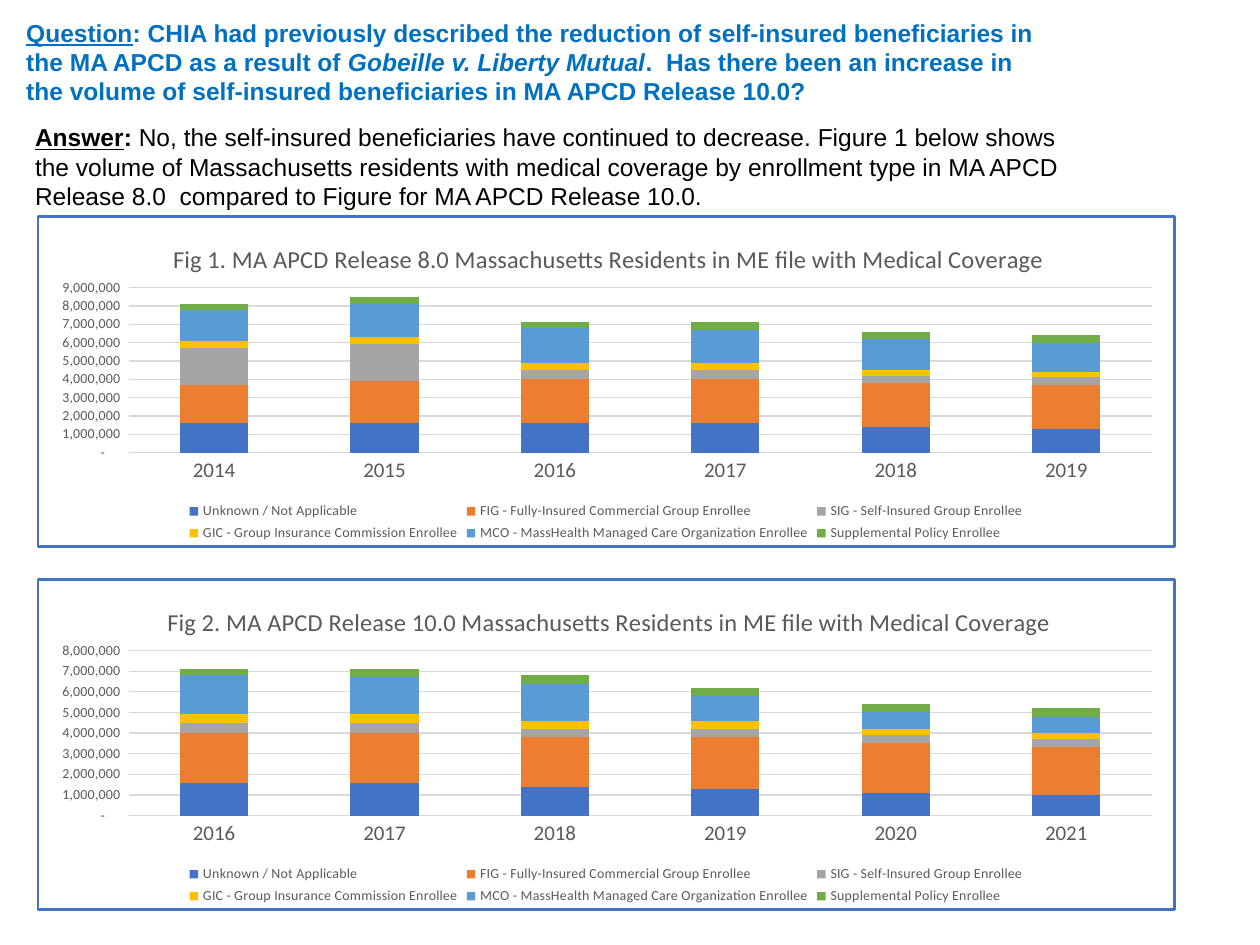
from lxml.etree import SubElement
from pptx import Presentation
from pptx.chart.data import CategoryChartData
from pptx.dml.color import RGBColor
from pptx.enum.chart import XL_CHART_TYPE, XL_LEGEND_POSITION, XL_TICK_MARK
from pptx.oxml import parse_xml
from pptx.oxml.ns import nsdecls, qn
from pptx.util import Inches, Pt

# Content: each paragraph is a list of (text, styles), b = bold, i = italic, u = underlined
QUESTION = [
    [("Question", "bu"),
     (": CHIA had previously described the reduction of self-insured beneficiaries in "
      "the MA APCD as a result of ", "b"),
     ("Gobeille v. Liberty Mutual", "bi"),
     (".  Has there been an increase in", "b")],
    [("the volume of self-insured beneficiaries in MA APCD Release 10.0?", "b")],
]
ANSWER = [
    [("Answer", "bu"), (": ", "b"),
     ("No, the self-insured beneficiaries have continued to decrease. Figure 1 below shows "
      "the volume of Massachusetts residents with medical coverage by enrollment type in "
      "MA APCD Release 8.0  compared to Figure for MA APCD Release 10.0.", "")],
]
ENROLLMENT_TYPES = [
    ("Unknown / Not Applicable", "4472C4"),
    ("FIG - Fully-Insured Commercial Group Enrollee", "ED7D31"),
    ("SIG - Self-Insured Group Enrollee", "A5A5A5"),
    ("GIC - Group Insurance Commission Enrollee", "FFC000"),
    ("MCO - MassHealth Managed Care Organization Enrollee", "5B9BD5"),
    ("Supplemental Policy Enrollee", "70AD47"),
]
# Volumes in millions, one row per enrollment type; title_left is a share of the chart width
FIGURES = [
    {"title": "Fig 1. MA APCD Release 8.0 Massachusetts Residents in ME file with Medical Coverage",
     "title_left": 0.115, "first_year": 2014, "axis_top": 9,
     "volumes": [
         [1.6, 1.6, 1.6, 1.6, 1.4, 1.3],
         [2.1, 2.3, 2.4, 2.4, 2.4, 2.4],
         [2.0, 2.0, 0.5, 0.5, 0.4, 0.4],
         [0.4, 0.4, 0.4, 0.4, 0.3, 0.3],
         [1.7, 1.8, 1.9, 1.8, 1.7, 1.6],
         [0.3, 0.4, 0.3, 0.4, 0.4, 0.4]]},
    {"title": "Fig 2. MA APCD Release 10.0 Massachusetts Residents in ME file with Medical Coverage",
     "title_left": 0.11, "first_year": 2016, "axis_top": 8,
     "volumes": [
         [1.6, 1.6, 1.4, 1.3, 1.1, 1.0],
         [2.4, 2.4, 2.4, 2.5, 2.4, 2.3],
         [0.5, 0.5, 0.4, 0.4, 0.4, 0.4],
         [0.4, 0.4, 0.4, 0.4, 0.3, 0.3],
         [1.9, 1.8, 1.8, 1.2, 0.8, 0.8],
         [0.3, 0.4, 0.4, 0.4, 0.4, 0.4]]},
]
MILLION = 1_000_000
GRAY, GRID, BLUE = "595959", "D9D9D9", "4472C4"
NUMBER_FORMAT = '_(* #,##0_);_(* \\(#,##0\\);_(* "-"??_);_('
CHART_LEFT, CHART_TOP, CHART_WIDTH, CHART_HEIGHT, CHART_PITCH = 0.29, 1.71, 9.04, 2.64, 2.88


def rgb(color):
    return RGBColor.from_string(color)


def style_font(font, size, color, name="Calibri"):
    font.size, font.name, font.color.rgb = Pt(size), name, rgb(color)


def style_line(line, color, width=0.75):
    line.color.rgb, line.width = rgb(color), Pt(width)


def add_text(slide, paragraphs, color, left, top, width, height):
    frame = slide.shapes.add_textbox(*map(Inches, (left, top, width, height))).text_frame
    frame.word_wrap = True
    for index, runs in enumerate(paragraphs):
        paragraph = frame.paragraphs[0] if index == 0 else frame.add_paragraph()
        style_font(paragraph.font, 14, color, "Arial")
        for text, styles in runs:
            run = paragraph.add_run()
            run.text = text
            run.font.bold = "b" in styles
            run.font.italic = "i" in styles
            run.font.underline = "u" in styles


def set_layout(parent, before, **shares):
    """Place a chart part by shares of the chart's size."""
    for old in parent.findall(qn("c:layout")):
        parent.remove(old)
    layout = parse_xml(f"<c:layout {nsdecls('c')}><c:manualLayout/></c:layout>")
    for key, value in shares.items():
        SubElement(layout[0], qn(f"c:{key}")).set("val", str(value))
    if before is None:
        parent.insert(0, layout)
    else:
        before.addnext(layout)


def add_figure(slide, figure, top):
    data = CategoryChartData(number_format="#,##0")
    data.categories = [str(figure["first_year"] + n) for n in range(len(figure["volumes"][0]))]
    for (name, _), volumes in zip(ENROLLMENT_TYPES, figure["volumes"]):
        data.add_series(name, [round(volume * MILLION) for volume in volumes])
    chart = slide.shapes.add_chart(
        XL_CHART_TYPE.COLUMN_STACKED,
        *map(Inches, (CHART_LEFT, top, CHART_WIDTH, CHART_HEIGHT)), data).chart
    style_font(chart.font, 10, "000000")

    # Stacked columns
    plot = chart.plots[0]
    plot.gap_width, plot.overlap, plot.vary_by_categories = 150, 100, False
    for series, (_, color) in zip(plot.series, ENROLLMENT_TYPES):
        series.format.fill.solid()
        series.format.fill.fore_color.rgb = rgb(color)
    plot_area = chart._chartSpace.chart.plotArea
    set_layout(plot_area, None, layoutTarget="inner", xMode="edge", yMode="edge",
               x=0.08, y=0.215, w=0.9, h=0.5)

    # Title
    chart.has_title = True
    title = chart.chart_title
    title.text_frame.text = figure["title"]
    title_font = title.text_frame.paragraphs[0].font
    style_font(title_font, 14, GRAY)
    title_font.bold = False
    title.include_in_layout = False
    set_layout(title._element, title._element.find(qn("c:tx")),
               xMode="edge", yMode="edge", x=figure["title_left"], y=0.065)

    # Axes
    years, volume = chart.category_axis, chart.value_axis
    for axis, size in ((years, 12), (volume, 8)):
        style_font(axis.tick_labels.font, size, GRAY)
        axis.major_tick_mark = axis.minor_tick_mark = XL_TICK_MARK.NONE
    style_line(years.format.line, GRID)
    volume.format.line.fill.background()
    style_line(volume.major_gridlines.format.line, GRID)
    volume.minimum_scale, volume.maximum_scale = 0, figure["axis_top"] * MILLION
    volume.major_unit = MILLION
    volume.tick_labels.number_format = NUMBER_FORMAT
    volume.tick_labels.number_format_is_linked = False

    # Legend
    chart.has_legend = True
    chart.legend.position = XL_LEGEND_POSITION.BOTTOM
    chart.legend.include_in_layout = False
    style_font(chart.legend.font, 8, GRAY)

    # Frame
    chart._chartSpace.chart.addnext(parse_xml(
        f'<c:spPr {nsdecls("c", "a")}><a:solidFill><a:srgbClr val="FFFFFF"/></a:solidFill>'
        f'<a:ln w="{Pt(1.5)}"><a:solidFill><a:srgbClr val="{BLUE}"/></a:solidFill></a:ln></c:spPr>'))


def main():
    deck = Presentation()
    deck.slide_width, deck.slide_height = Inches(10), Inches(7.5)
    slide = deck.slides.add_slide(deck.slide_layouts[6])
    add_text(slide, QUESTION, "0070C0", 0.11, 0.09, 8.22, 0.81)
    for row, figure in enumerate(FIGURES):
        add_figure(slide, figure, CHART_TOP + row * CHART_PITCH)
    add_text(slide, ANSWER, "000000", 0.18, 0.92, 8.5, 0.81)
    deck.save("out.pptx")


if __name__ == "__main__":
    main()
